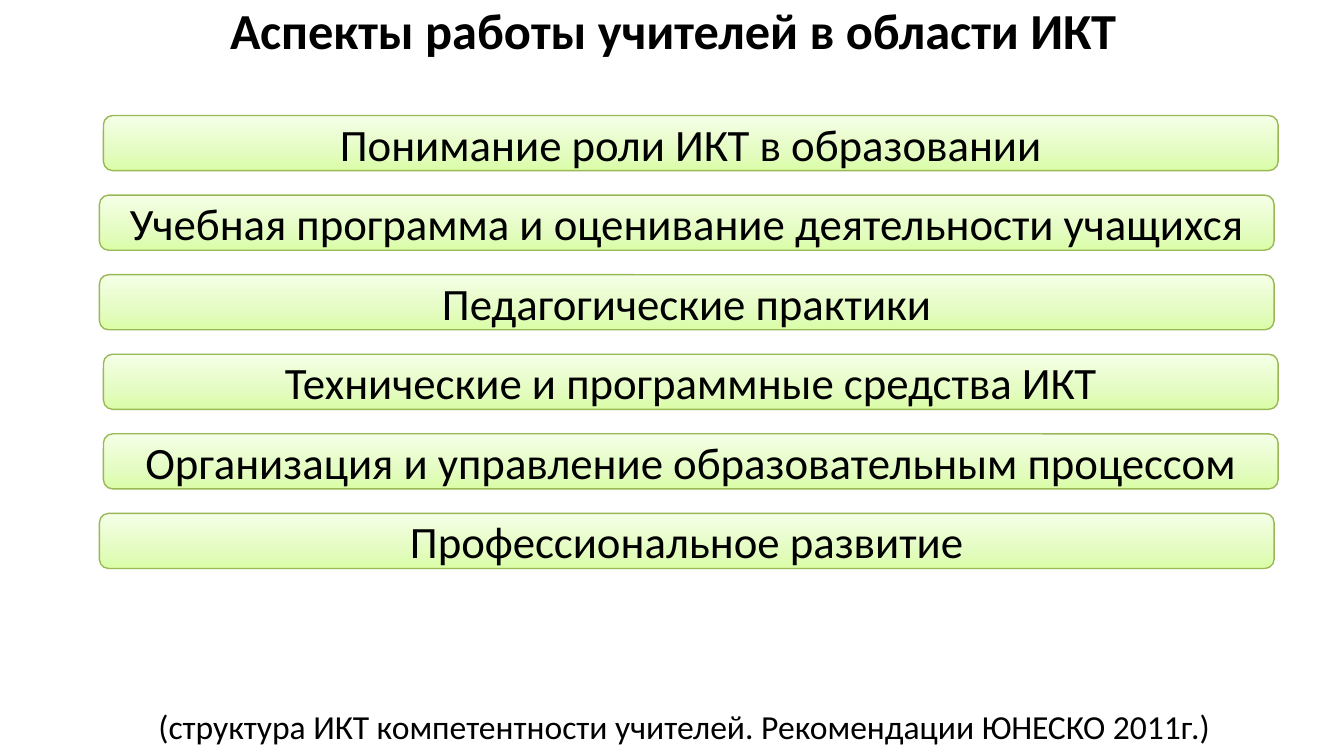
import copy

import pptx
import pptx.dml.color
import pptx.enum.shapes
import pptx.enum.text
import pptx.util
from pptx.oxml.ns import qn

Inches, Pt = pptx.util.Inches, pptx.util.Pt
RGB = pptx.dml.color.RGBColor.from_string
ALIGN = pptx.enum.text.PP_ALIGN
ANCHOR = pptx.enum.text.MSO_ANCHOR

# Content
TITLE = "Аспекты работы учителей в области ИКТ"
ASPECTS = [  # text, left edge
    ("Понимание роли ИКТ в образовании", 0.77),
    ("Учебная программа и оценивание деятельности учащихся", 0.74),
    ("Педагогические практики", 0.74),
    ("Технические и программные средства ИКТ", 0.77),
    ("Организация и управление образовательным процессом", 0.77),
    ("Профессиональное развитие", 0.74),
]
FOOTNOTE = "(структура ИКТ компетентности учителей. Рекомендации ЮНЕСКО 2011г.)"

# Style and layout
COLORS = {"text": "000000", "border": "98B955",
          "deep": "DAFDA7", "mid": "E4FCC2", "pale": "F5FFE7"}
GRADIENT = [(0, "deep"), (0.35, "mid"), (1, "pale")]
FIRST_TOP, LAST_TOP, BAR_WIDTH, BAR_HEIGHT = 0.86, 3.82, 8.74, 0.41
BAR_STEP = (LAST_TOP - FIRST_TOP) / (len(ASPECTS) - 1)


def write(shape, text, size, align=ALIGN.CENTER, anchor=ANCHOR.MIDDLE,
          bold=False, wrap=True):
    tf = shape.text_frame
    tf.text = text
    tf.word_wrap = wrap
    tf.vertical_anchor = anchor
    p = tf.paragraphs[0]
    p.alignment = align
    font = p.runs[0].font
    font.name, font.size, font.bold = "Calibri", Pt(size), bold
    font.color.rgb = RGB(COLORS["text"])


def fill_gradient(shape):
    fill = shape.fill
    fill.gradient()
    fill.gradient_angle = 90  # first stop at the bottom
    stop_list = shape._element.spPr.find(qn("a:gradFill")).find(qn("a:gsLst"))
    stop_list.append(copy.deepcopy(stop_list[0]))
    for stop, (position, color) in zip(fill.gradient_stops, GRADIENT):
        stop.position = position
        stop.color.rgb = RGB(COLORS[color])


# Slide in 16:9
prs = pptx.Presentation()
prs.slide_width = Inches(10)
prs.slide_height = Inches(10 * 9 / 16)
s = prs.slides.add_slide(prs.slide_layouts[6])

# Title
title = s.shapes.add_textbox(Inches(0.51), Inches(-0.01), Inches(9), Inches(0.46))
write(title, TITLE, 27, bold=True)

# Aspect bars
for i, (text, left) in enumerate(ASPECTS):
    bar = s.shapes.add_shape(
        pptx.enum.shapes.MSO_SHAPE.ROUNDED_RECTANGLE,
        Inches(left), Inches(FIRST_TOP + i * BAR_STEP),
        Inches(BAR_WIDTH), Inches(BAR_HEIGHT))
    bar.shadow.inherit = False
    fill_gradient(bar)
    bar.line.color.rgb = RGB(COLORS["border"])
    bar.line.width = Pt(0.75)
    write(bar, text, 24)

# Footnote
note = s.shapes.add_textbox(Inches(1.08), Inches(5.2), Inches(8.12), Inches(0.4))
write(note, FOOTNOTE, 18, align=ALIGN.LEFT, anchor=ANCHOR.TOP, wrap=False)
note.text_frame.auto_size = pptx.enum.text.MSO_AUTO_SIZE.SHAPE_TO_FIT_TEXT

prs.save("out.pptx")
